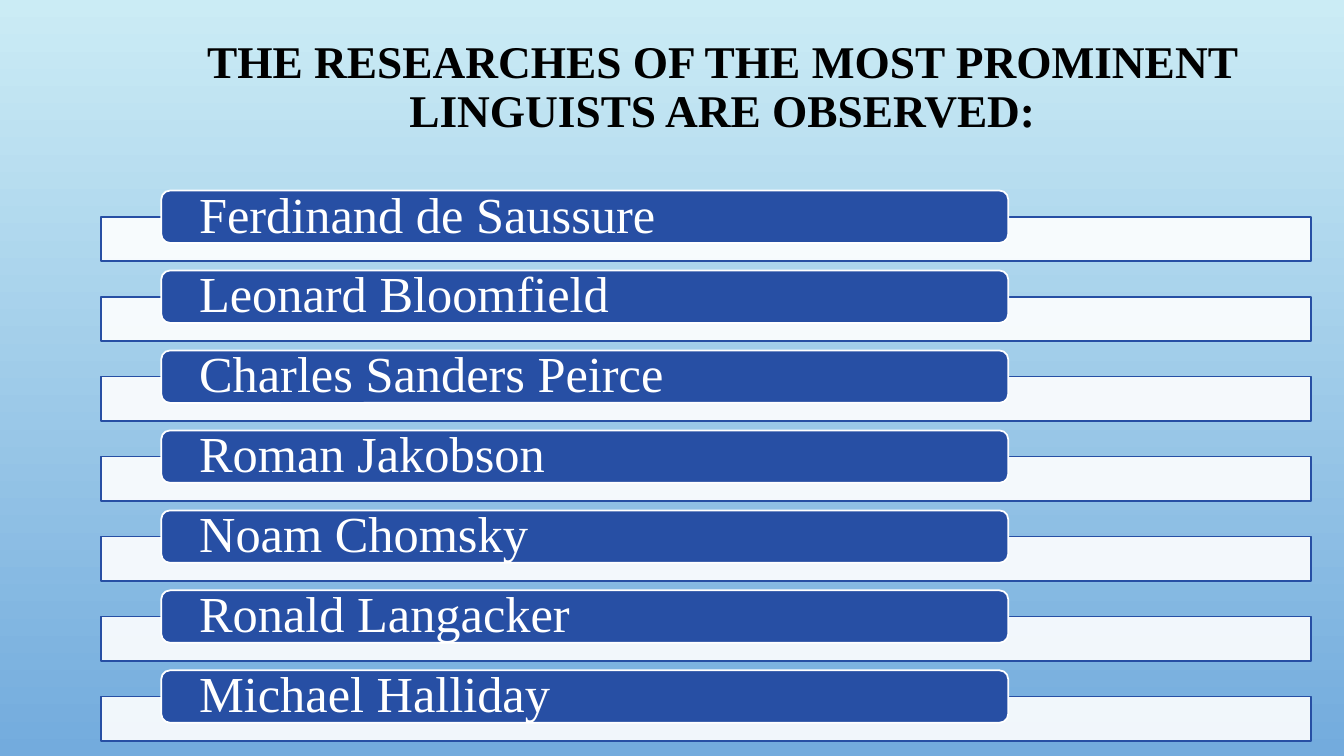
from dataclasses import dataclass

from lxml.etree import SubElement
from pptx import Presentation
from pptx.dml.color import RGBColor
from pptx.enum.shapes import MSO_SHAPE
from pptx.enum.text import MSO_ANCHOR, MSO_AUTO_SIZE, PP_ALIGN
from pptx.oxml.ns import qn
from pptx.util import Inches, Pt

FONT = "Times New Roman"
BLUE, WHITE, BLACK = "274FA4", "FFFFFF", "000000"
SKY_TOP, SKY_BOTTOM = "CBECF5", "73ABDD"
LINGUISTS = [
    "Ferdinand de Saussure",
    "Leonard Bloomfield",
    "Charles Sanders Peirce",
    "Roman Jakobson",
    "Noam Chomsky",
    "Ronald Langacker",
    "Michael Halliday",
]
FIRST_BAR, LAST_BAR = 2.15, 6.91
PITCH = (LAST_BAR - FIRST_BAR) / (len(LINGUISTS) - 1)
PILL_RISE = 0.26


@dataclass
class Panel:
    kind: MSO_SHAPE
    left: float
    width: float
    height: float
    fill: str
    line: str
    opacity: int = 100


BAR = Panel(MSO_SHAPE.RECTANGLE, 1, 12, 0.44, WHITE, BLUE, opacity=90)
PILL = Panel(MSO_SHAPE.ROUNDED_RECTANGLE, 1.6, 8.4, 0.52, BLUE, WHITE)


def color(value: str) -> RGBColor:
    return RGBColor.from_string(value)


def add_panel(slide, panel: Panel, top: float):
    sp = slide.shapes.add_shape(panel.kind, Inches(panel.left), Inches(top),
                                Inches(panel.width), Inches(panel.height))
    sp.shadow.inherit = False
    sp.fill.solid()
    sp.fill.fore_color.rgb = color(panel.fill)
    sp.line.color.rgb = color(panel.line)
    sp.line.width = Pt(1.25)
    if panel.opacity < 100:
        fill = sp.element.spPr.find(qn("a:solidFill"))
        SubElement(fill[0], qn("a:alpha"), val=str(panel.opacity * 1000))
    return sp


def write(sp, text: str, *, size: float, hex_color: str, bold: bool = False,
          align: PP_ALIGN = PP_ALIGN.LEFT, side: float = 0.1,
          top: float = 0, bottom: float = 0) -> None:
    """Fill a shape with one formatted paragraph; side, top and bottom are insets."""
    tf = sp.text_frame
    tf.word_wrap = True
    tf.auto_size = MSO_AUTO_SIZE.NONE
    tf.vertical_anchor = MSO_ANCHOR.MIDDLE
    tf.margin_left = tf.margin_right = Inches(side)
    tf.margin_top, tf.margin_bottom = Inches(top), Inches(bottom)
    p = tf.paragraphs[0]
    p.alignment = align
    p.line_spacing = 0.9
    r = p.add_run()
    r.text = text
    r.font.name = FONT
    r.font.size = Pt(size)
    r.font.bold = bold
    r.font.color.rgb = color(hex_color)


def paint_background(slide) -> None:
    fill = slide.background.fill
    fill.gradient()
    fill.gradient_angle = 270
    for stop, shade in zip(fill.gradient_stops, (SKY_TOP, SKY_BOTTOM)):
        stop.color.rgb = color(shade)


def add_title(slide) -> None:
    title = slide.shapes.title
    title.left, title.top = Inches(1.24), Inches(0.51)
    title.width, title.height = Inches(11.85), Inches(1.23)
    write(title, "THE RESEARCHES OF THE MOST PROMINENT LINGUISTS ARE OBSERVED:",
          size=32.4, hex_color=BLACK, bold=True, align=PP_ALIGN.CENTER,
          top=0.05, bottom=0.55)


def main() -> None:
    prs = Presentation()
    prs.slide_width, prs.slide_height = Inches(13.33), Inches(7.5)
    slide = prs.slides.add_slide(prs.slide_layouts[5])
    paint_background(slide)
    add_title(slide)
    for i, name in enumerate(LINGUISTS):
        top = FIRST_BAR + i * PITCH
        add_panel(slide, BAR, top)
        pill = add_panel(slide, PILL, top - PILL_RISE)
        write(pill, name, size=36, hex_color=WHITE, side=0.35)
    prs.save("out.pptx")


if __name__ == "__main__":
    main()
